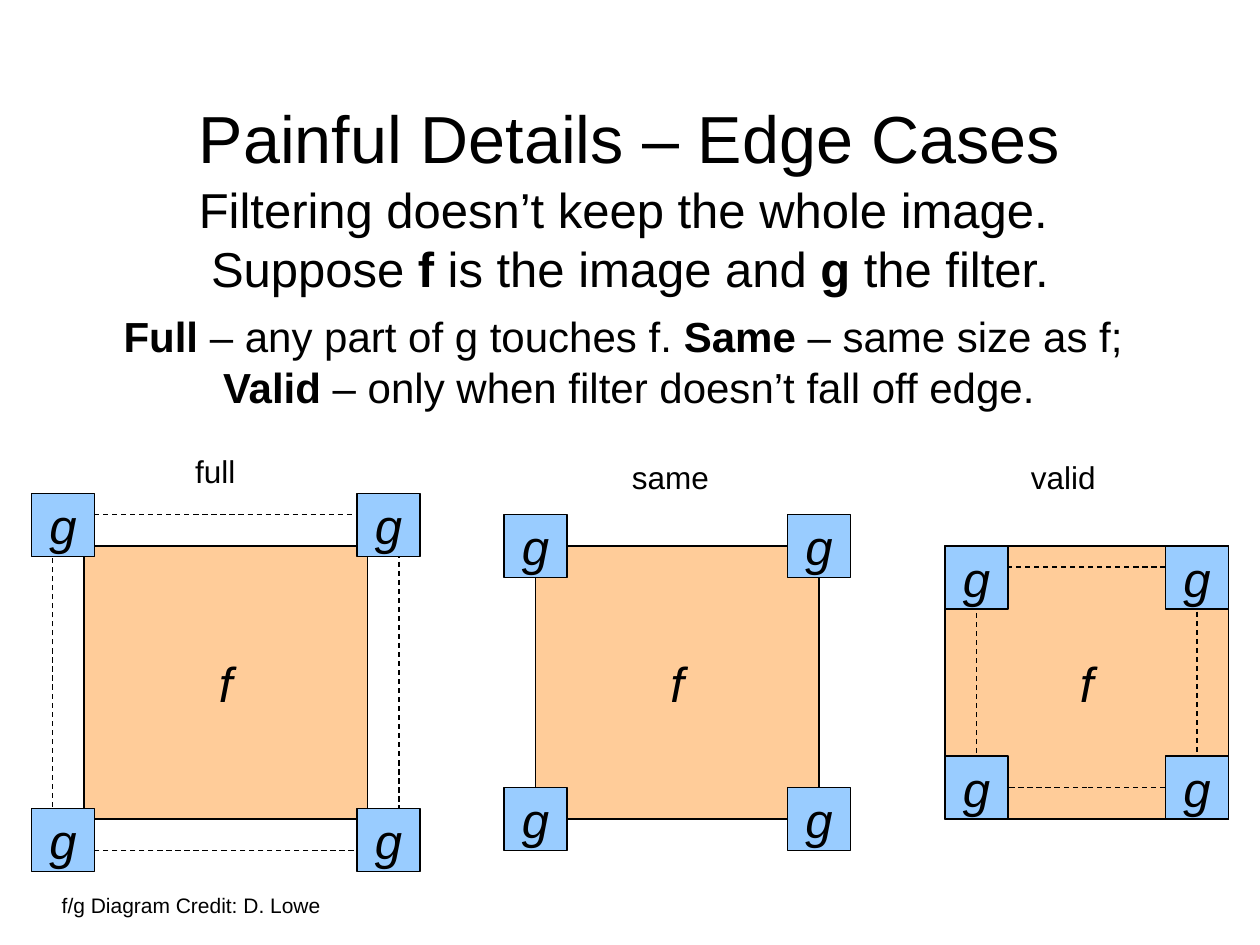
import pptx
import pptx.dml.color
import pptx.enum.dml
import pptx.enum.shapes
import pptx.enum.text
import pptx.util

BLACK = pptx.dml.color.RGBColor(0x00, 0x00, 0x00)
WHITE = pptx.dml.color.RGBColor(0xFF, 0xFF, 0xFF)
IMAGE_ORANGE = pptx.dml.color.RGBColor(0xFF, 0xCC, 0x99)
FILTER_BLUE = pptx.dml.color.RGBColor(0x99, 0xCC, 0xFF)

CENTER = pptx.enum.text.PP_ALIGN.CENTER
LEFT = pptx.enum.text.PP_ALIGN.LEFT
MIDDLE = pptx.enum.text.MSO_ANCHOR.MIDDLE
TOP = pptx.enum.text.MSO_ANCHOR.TOP

COLUMNS, ROWS = 120, 90
IMAGE_TOP, IMAGE_WIDTH, IMAGE_HEIGHT = 52, 27, 26
FILTER_SIZE = 6


def write_text(shape, text, size=28, italic=False, align=CENTER, anchor=TOP,
               wrap=True, spacing=None):
    frame = shape.text_frame
    frame.word_wrap = wrap
    frame.vertical_anchor = anchor
    for index, line in enumerate(text.split("\n")):
        paragraph = frame.paragraphs[0] if index == 0 else frame.add_paragraph()
        paragraph.alignment = align
        if spacing:
            paragraph.line_spacing = spacing
        for position, part in enumerate(line.split("**")):
            if part:
                run = paragraph.add_run()
                run.text = part
                run.font.name = "Arial"
                run.font.size = pptx.util.Pt(size)
                run.font.bold = position % 2 == 1
                run.font.italic = italic
                run.font.color.rgb = BLACK


class SlideBuilder:
    def __init__(self, presentation):
        self.column = presentation.slide_width / COLUMNS
        self.row = presentation.slide_height / ROWS
        self.slide = presentation.slides.add_slide(presentation.slide_layouts[5])

    def place(self, left, top, width, height):
        return (round(left * self.column), round(top * self.row),
                round(width * self.column), round(height * self.row))

    def title(self, text, *box):
        title = self.slide.shapes.title
        title.left, title.top, title.width, title.height = self.place(*box)
        write_text(title, text, size=38, anchor=MIDDLE, spacing=0.9)

    def text(self, text, *box, **style):
        write_text(self.slide.shapes.add_textbox(*self.place(*box)), text, **style)

    def rectangle(self, *box, fill=None, dashed=False, letter=None):
        shape = self.slide.shapes.add_shape(
            pptx.enum.shapes.MSO_SHAPE.RECTANGLE, *self.place(*box))
        shape.shadow.inherit = False
        if fill is None:
            shape.fill.background()
        else:
            shape.fill.solid()
            shape.fill.fore_color.rgb = fill
        shape.line.color.rgb = BLACK
        shape.line.width = pptx.util.Pt(0.75)
        if dashed:
            shape.line.dash_style = pptx.enum.dml.MSO_LINE.DASH
        if letter:
            write_text(shape, letter, italic=True, anchor=MIDDLE, wrap=False)

    def image(self, left):
        self.rectangle(left, IMAGE_TOP, IMAGE_WIDTH, IMAGE_HEIGHT,
                       fill=IMAGE_ORANGE, letter="f")

    def filters(self, lefts, tops):
        for top in tops:
            for left in reversed(lefts):
                self.rectangle(left, top, FILTER_SIZE, FILTER_SIZE,
                               fill=FILTER_BLUE, letter="g")


def main():
    presentation = pptx.Presentation()
    presentation.slide_width = pptx.util.Inches(10)
    presentation.slide_height = pptx.util.Inches(7.5)
    builder = SlideBuilder(presentation)

    builder.title("Painful Details – Edge Cases", 8.25, 4.8, 103.5, 17.4)

    builder.rectangle(5, 49, 33, 32, fill=WHITE, dashed=True)
    builder.image(8)
    builder.filters((3, 34), (47, 77))

    builder.image(51)
    builder.filters((48, 75), (49, 75))

    builder.image(90)
    builder.rectangle(93, 54, 21, 21, dashed=True)
    builder.filters((90, 111), (52, 72))

    for label, left, top, width in (("full", 17.4, 42.5, 7.5),
                                    ("same", 59, 43, 12.25),
                                    ("valid", 97, 43, 10.75)):
        builder.text(label, left, top, width, 6, size=18, align=LEFT)

    builder.text("Filtering doesn’t keep the whole image. \n"
                 "Suppose** f **is the image and **g** the filter.",
                 3, 16.5, 114, 12.5)
    builder.text("f/g Diagram Credit: D. Lowe", 4.7, 84.4, 72.3, 3.6,
                 size=12, align=LEFT)
    builder.text("**Full** – any part of g touches f. **Same** – same size as f; \n"
                 "**Valid** – only when filter doesn’t fall off edge.",
                 5.4, 29, 109, 11, size=24)

    presentation.save("out.pptx")


if __name__ == "__main__":
    main()
